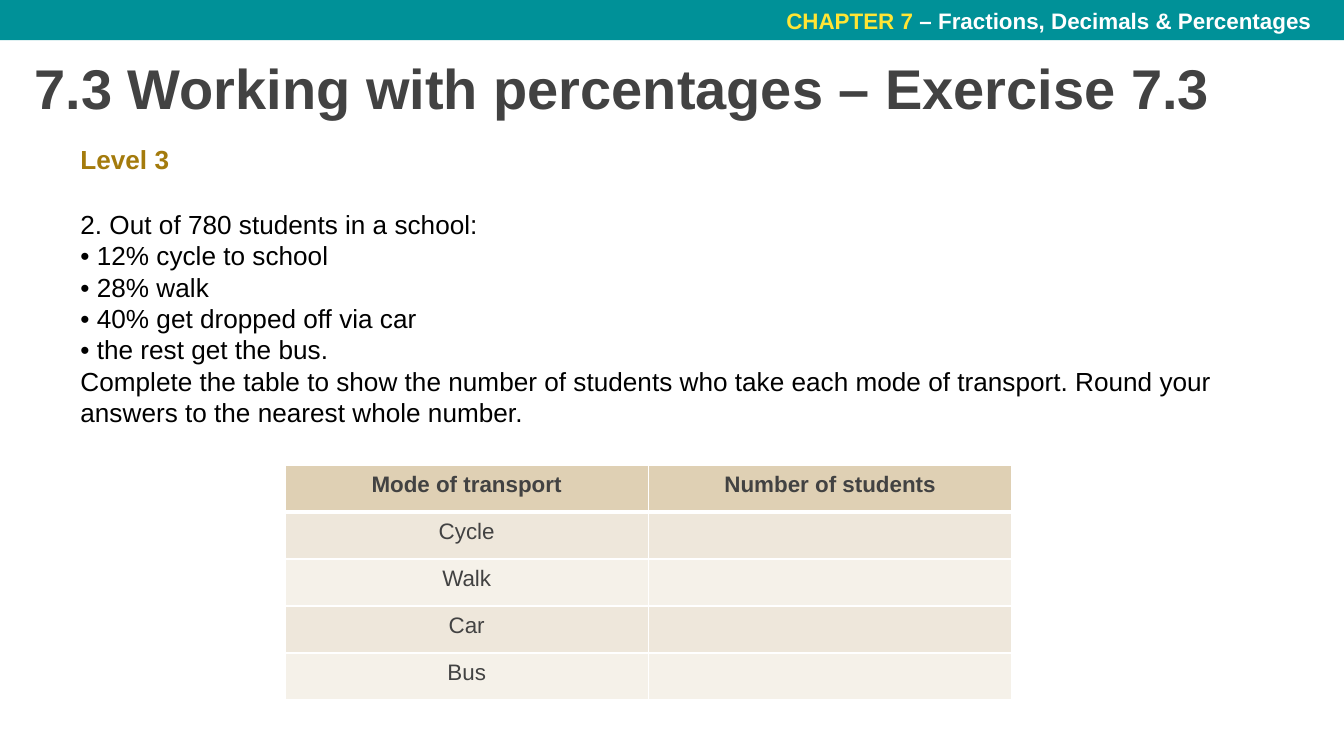
from lxml import etree
from pptx import Presentation
from pptx.dml.color import RGBColor
from pptx.enum.shapes import MSO_SHAPE
from pptx.enum.text import MSO_ANCHOR, PP_ALIGN
from pptx.oxml.ns import qn
from pptx.util import Inches, Pt

RECT = MSO_SHAPE.RECTANGLE
TOP, MIDDLE = MSO_ANCHOR.TOP, MSO_ANCHOR.MIDDLE
LEFT, CENTER = PP_ALIGN.LEFT, PP_ALIGN.CENTER

FONT = "Arial"
TEAL, YELLOW, WHITE, BLACK = "009198", "FFE535", "FFFFFF", "000000"
GREY, GOLD = "424242", "A47B0C"
HEADER_FILL, ROW_FILLS = "DFD0B4", ("EEE7DB", "F5F1E9")

QUESTION = [
    "2. Out of 780 students in a school:",
    "• 12% cycle to school",
    "• 28% walk",
    "• 40% get dropped off via car",
    "• the rest get the bus.",
    "Complete the table to show the number of students who take each mode "
    "of transport. Round your answers to the nearest whole number.",
]
TRANSPORT = [
    ("Mode of transport", "Number of students"),
    ("Cycle", ""),
    ("Walk", ""),
    ("Car", ""),
    ("Bus", ""),
]


def rgb(color):
    return RGBColor.from_string(color)


def add_run(p, text, size, color, bold=False):
    r = p.add_run()
    r.text = text
    r.font.name = FONT
    r.font.size = Pt(size)
    r.font.bold = bold
    r.font.color.rgb = rgb(color)


def add_bar(slide, x, y, w, h, color):
    sp = slide.shapes.add_shape(RECT, Inches(x), Inches(y), Inches(w), Inches(h))
    sp.shadow.inherit = False
    sp.fill.solid()
    sp.fill.fore_color.rgb = rgb(color)
    sp.line.fill.background()


def add_text(slide, x, y, w, h, paragraphs, size, bold=False,
             align=LEFT, anchor=TOP, inset=0.05):
    """Add a text box; each paragraph is a list of (text, color) runs."""
    tb = slide.shapes.add_textbox(Inches(x), Inches(y), Inches(w), Inches(h))
    tf = tb.text_frame
    tf.word_wrap = True
    tf.vertical_anchor = anchor
    tf.margin_left = tf.margin_right = Inches(0.1)
    tf.margin_top = tf.margin_bottom = Inches(inset)
    for i, runs in enumerate(paragraphs):
        p = tf.add_paragraph() if i else tf.paragraphs[0]
        p.alignment = align
        for text, color in runs:
            add_run(p, text, size, color, bold)


def set_borders(cell, color, **widths):
    """Set border widths in points, given in the order lnL, lnR, lnT, lnB."""
    tcPr = cell._tc.get_or_add_tcPr()
    for i, (side, width) in enumerate(widths.items()):
        ln = etree.Element(qn(f"a:{side}"), w=str(Pt(width)))
        fill = etree.SubElement(ln, qn("a:solidFill"))
        etree.SubElement(fill, qn("a:srgbClr"), val=color)
        tcPr.insert(i, ln)


def add_table(slide, x, y, w, h, rows):
    frame = slide.shapes.add_table(len(rows), len(rows[0]), Inches(x), Inches(y),
                                   Inches(w), Inches(h))
    for i, row in enumerate(rows):
        header = i == 0
        for j, text in enumerate(row):
            cell = frame.table.cell(i, j)
            cell.fill.solid()
            cell.fill.fore_color.rgb = rgb(HEADER_FILL if header else ROW_FILLS[(i - 1) % 2])
            set_borders(cell, WHITE, lnL=1, lnR=1,
                        lnT=3 if i == 1 else 1, lnB=3 if header else 1)
            p = cell.text_frame.paragraphs[0]
            p.alignment = CENTER
            p.font.size = Pt(12)
            if text:
                add_run(p, text, 12, GREY, bold=header)


def main():
    prs = Presentation()
    prs.slide_width = Inches(10)
    prs.slide_height = prs.slide_width * 9 // 16
    slide = prs.slides.add_slide(prs.slide_layouts[6])

    add_bar(slide, 0, 0, 10, 0.3, TEAL)
    add_text(slide, 5.74, 0, 4.13, 0.31,
             [[("CHAPTER 7 ", YELLOW), ("– Fractions, Decimals & Percentages", WHITE)]],
             12, bold=True, align=CENTER, anchor=MIDDLE, inset=0.1)
    add_text(slide, 0.16, 0.3, 9.32, 0.71,
             [[("7.3 Working with percentages – Exercise 7.3", GREY)]],
             30, bold=True, inset=0.1)
    add_text(slide, 0.5, 1.02, 3.2, 0.34, [[("Level 3", GOLD)]], 14, bold=True)
    add_text(slide, 0.5, 1.5, 9.32, 1.75, [[(line, BLACK)] for line in QUESTION], 14)
    add_table(slide, 2.12, 3.46, 5.41, 1.75, TRANSPORT)

    prs.save("out.pptx")


if __name__ == "__main__":
    main()
